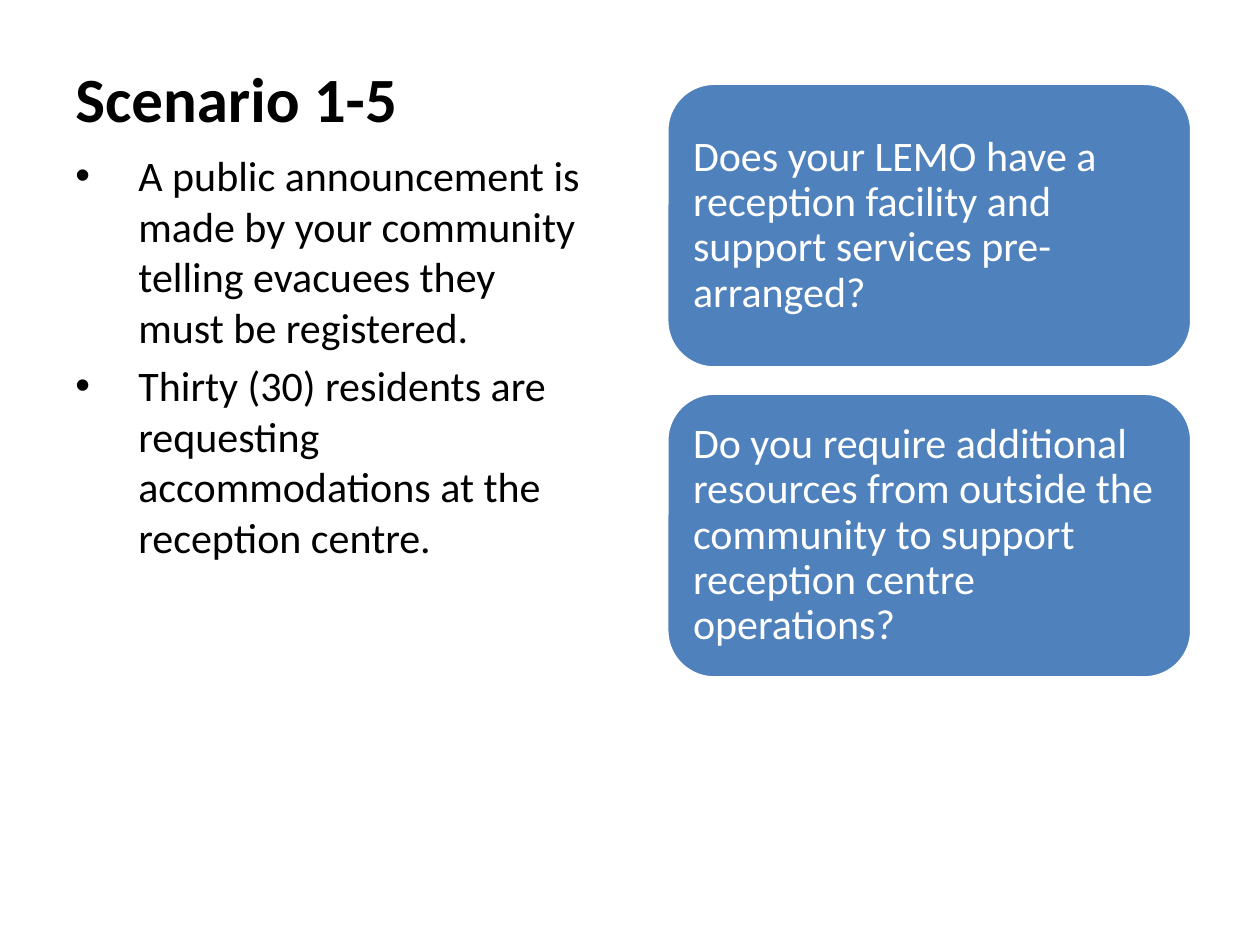
import dataclasses

import pptx
import pptx.dml.color
import pptx.enum.shapes
import pptx.enum.text
import pptx.util
from pptx.oxml import parse_xml
from pptx.oxml.ns import nsdecls

Pt = pptx.util.Pt
Anchor = pptx.enum.text.MSO_ANCHOR


@dataclasses.dataclass
class Theme:
    font: str = "Calibri"
    text: str = "000000"
    card: str = "4F81BD"
    light: str = "FFFFFF"
    title_size: float = 36
    body_size: float = 24


def color(value):
    return pptx.dml.color.RGBColor.from_string(value)


def write_paragraph(paragraph, text, *, font, size, fill, bold=False, bullet=False,
                    before=0, after=0, spacing=None):
    if bullet:
        properties = paragraph._p.get_or_add_pPr()
        properties.set("marL", str(Pt(36)))
        properties.set("indent", str(-Pt(36)))
        properties.append(parse_xml(f'<a:buFont {nsdecls("a")} typeface="Arial"/>'))
        properties.append(parse_xml(f'<a:buChar {nsdecls("a")} char="•"/>'))
    paragraph.alignment = pptx.enum.text.PP_ALIGN.LEFT
    paragraph.space_before = Pt(before)
    paragraph.space_after = Pt(after)
    if spacing:
        paragraph.line_spacing = spacing
    run = paragraph.add_run()
    run.text = text
    run.font.name = font
    run.font.size = Pt(size)
    run.font.bold = bold
    run.font.color.rgb = color(fill)


class SlideBuilder:
    def __init__(self, slide, theme):
        self.slide = slide
        self.theme = theme

    def text_box(self, left, top, width, height):
        shape = self.slide.shapes.add_textbox(Pt(left), Pt(top), Pt(width), Pt(height))
        shape.text_frame.word_wrap = True
        return shape.text_frame

    def title(self, text, left, top, width, height):
        frame = self.text_box(left, top, width, height)
        frame.vertical_anchor = Anchor.BOTTOM
        frame.margin_bottom = Pt(36)
        write_paragraph(frame.paragraphs[0], text, font=self.theme.font,
                        size=self.theme.title_size, fill=self.theme.text, bold=True)

    def bullets(self, items, left, top, width, height):
        frame = self.text_box(left, top, width, height)
        for index, item in enumerate(items):
            paragraph = frame.add_paragraph() if index else frame.paragraphs[0]
            write_paragraph(paragraph, item, font=self.theme.font, size=self.theme.body_size,
                            fill=self.theme.text, bullet=True, before=4.8 if index else 0)

    def card(self, text, left, top, width, height):
        shape = self.slide.shapes.add_shape(
            pptx.enum.shapes.MSO_SHAPE.ROUNDED_RECTANGLE,
            Pt(left), Pt(top), Pt(width), Pt(height))
        shape.shadow.inherit = False
        shape.fill.solid()
        shape.fill.fore_color.rgb = color(self.theme.card)
        shape.line.color.rgb = color(self.theme.light)
        shape.line.width = Pt(2)
        frame = shape.text_frame
        frame.word_wrap = True
        frame.vertical_anchor = Anchor.MIDDLE
        frame.margin_left = frame.margin_right = Pt(7.2)
        frame.margin_top = frame.margin_bottom = Pt(7.2)
        write_paragraph(frame.paragraphs[0], text, font=self.theme.font,
                        size=self.theme.body_size, fill=self.theme.light,
                        after=8.4, spacing=0.9)


def main():
    presentation = pptx.Presentation()
    presentation.slide_width = Pt(720)
    presentation.slide_height = Pt(540)
    slide = presentation.slides.add_slide(presentation.slide_layouts[6])
    builder = SlideBuilder(slide, Theme())

    builder.title("Scenario 1-5", 36, 21.6, 237, 91.4)
    builder.bullets([
        "A public announcement is made by your community telling evacuees they must be registered.",
        "Thirty (30) residents are requesting accommodations at the reception centre.",
    ], 36, 82.1, 303, 343.4)

    questions = [
        "Does your LEMO have a reception facility and support services pre-arranged?",
        "Do you require additional resources from outside the community to support "
        "reception centre operations?",
    ]
    card_height, card_gap = 162.7, 14.4
    for index, question in enumerate(questions):
        builder.card(question, 381, 47.6 + index * (card_height + card_gap), 300, card_height)

    presentation.save("out.pptx")


if __name__ == "__main__":
    main()
